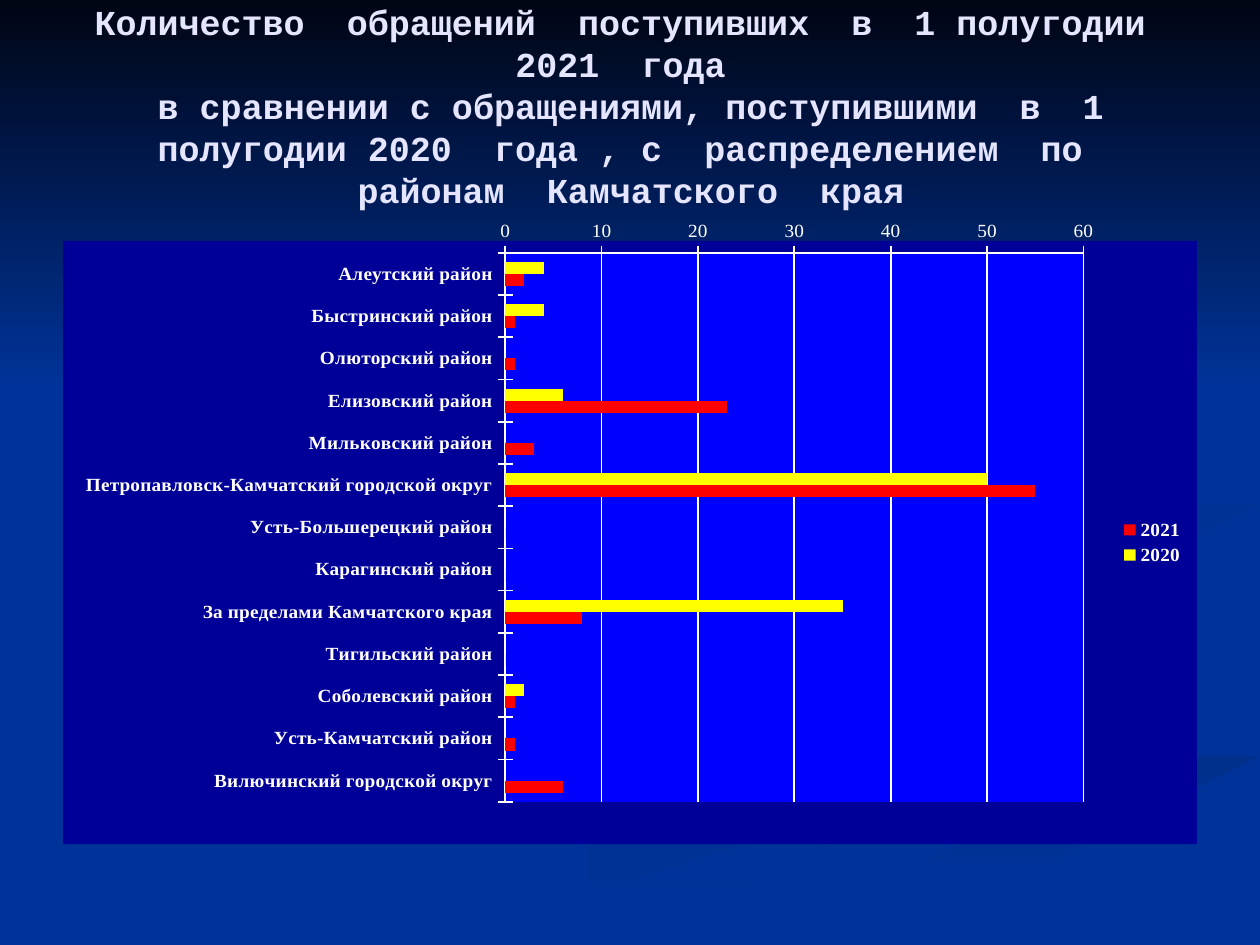
from dataclasses import dataclass

from pptx import Presentation
from pptx.chart.data import CategoryChartData
from pptx.dml.color import RGBColor
from pptx.enum.chart import (XL_AXIS_CROSSES, XL_CHART_TYPE,
                             XL_LEGEND_POSITION, XL_TICK_MARK)
from pptx.enum.shapes import MSO_SHAPE
from pptx.enum.text import MSO_ANCHOR, PP_ALIGN
from pptx.oxml import parse_xml
from pptx.oxml.ns import nsdecls
from pptx.util import Inches, Pt

BAR = XL_CHART_TYPE.BAR_CLUSTERED
CROSS = XL_TICK_MARK.CROSS
AXIS_MAX = XL_AXIS_CROSSES.MAXIMUM
LEGEND_RIGHT = XL_LEGEND_POSITION.RIGHT
RECT = MSO_SHAPE.RECTANGLE
MIDDLE = MSO_ANCHOR.MIDDLE
CENTER = PP_ALIGN.CENTER

BLUE, WHITE = "003399", "FFFFFF"
SERIF = "Times New Roman"


@dataclass
class Ribbon:
    """A background band; one colour gives a plain fill, two a gradient."""
    colors: tuple[str, ...]
    angle: int
    points: list[tuple[float, float]]


@dataclass
class Series:
    name: str
    color: str
    counts: dict[str, int]


RIBBONS = [
    Ribbon((BLUE, "003193"), 0, [
        (7.81, 5.53), (5.75, 4.59), (7.86, 5.66), (5.39, 6.49), (3, 7.49),
        (3.61, 7.49), (4.99, 6.87), (8, 5.81)]),
    Ribbon(("002F8C", BLUE), 90, [
        (5.03, 7.49), (5.71, 7.49), (6.7, 7.02), (7.85, 6.61), (9.98, 6.09),
        (9.98, 5.81), (8.31, 6.29), (6.3, 6.93)]),
    Ribbon((BLUE,), 0, [
        (7.25, 4.64), (9.43, 5.7), (6.63, 6.68), (4.77, 7.49), (5.03, 7.49),
        (6.3, 6.93), (8.31, 6.29), (9.99, 5.81), (9.99, 5.38), (7.81, 4.63),
        (9.99, 4.02), (9.99, 3.87)]),
    Ribbon(("003091", BLUE), 45, [
        (7.81, 4.6), (8.26, 4.96), (8.05, 4.72), (9.98, 4.2), (9.98, 4.02),
        (8.21, 4.34)]),
]

TITLE = ("Количество  обращений  поступивших  в  1 полугодии  2021  года \v"
         "в сравнении с обращениями, поступившими  в  1 полугодии 2020  года ,"
         " с  распределением  по  районам  Камчатского  края")

DISTRICTS = [
    "Алеутский район", "Быстринский район", "Олюторский район",
    "Елизовский район", "Мильковский район",
    "Петропавловск-Камчатский городской округ", "Усть-Большерецкий район",
    "Карагинский район", "За пределами Камчатского края",
    "Тигильский район", "Соболевский район", "Усть-Камчатский район",
    "Вилючинский городской округ"]
(ALEUT, BYSTR, OLYUT, ELIZ, MILK, PETRO, _, _,
 OUTSIDE, _, SOBOL, UST_KAM, VILYU) = DISTRICTS

# Districts that are not named have no appeals
SERIES = [
    Series("2020", "FFFF00",
           {ALEUT: 4, BYSTR: 4, ELIZ: 6, PETRO: 50, OUTSIDE: 35, SOBOL: 2}),
    Series("2021", "FF0000",
           {ALEUT: 2, BYSTR: 1, OLYUT: 1, ELIZ: 23, MILK: 3, PETRO: 55,
            OUTSIDE: 8, SOBOL: 1, UST_KAM: 1, VILYU: 6})]


def rgb(color: str) -> RGBColor:
    return RGBColor.from_string(color)


def paint(sp, colors: tuple[str, ...], angle: int) -> None:
    sp.shadow.inherit = False
    sp.line.fill.background()
    if len(colors) == 1:
        sp.fill.solid()
        sp.fill.fore_color.rgb = rgb(colors[0])
        return
    sp.fill.gradient()
    sp.fill.gradient_angle = -angle % 360
    for stop, color in zip(sp.fill.gradient_stops, colors):
        stop.color.rgb = rgb(color)


def style_font(font, size: float, color: str, bold: bool, name: str) -> None:
    font.size, font.bold, font.name = Pt(size), bold, name
    font.color.rgb = rgb(color)


def style_line(line, color: str) -> None:
    line.width = Pt(1)
    line.color.rgb = rgb(color)


def add_ribbon(s, ribbon: Ribbon) -> None:
    builder = s.shapes.build_freeform(*ribbon.points[0], scale=Inches(1))
    builder.add_line_segments(ribbon.points[1:], close=True)
    paint(builder.convert_to_shape(), ribbon.colors, ribbon.angle)


def add_title(s) -> None:
    tf = s.shapes.add_textbox(Inches(0.51), Inches(0.21),
                              Inches(9), Inches(1.25)).text_frame
    tf.word_wrap, tf.vertical_anchor = True, MIDDLE
    p = tf.paragraphs[0]
    p.text, p.alignment = TITLE, CENTER
    for r in p.runs:
        style_font(r.font, 20, "E5E5FF", True, "Courier New")


def area_fill(color: str):
    return parse_xml(f'<c:spPr {nsdecls("c", "a")}><a:solidFill>'
                     f'<a:srgbClr val="{color}"/></a:solidFill></c:spPr>')


def add_chart(s) -> None:
    data = CategoryChartData()
    data.categories = DISTRICTS
    for item in SERIES:
        data.add_series(item.name, [item.counts.get(d, 0) for d in DISTRICTS])
    chart = s.shapes.add_chart(BAR, Inches(0.5), Inches(1.75),
                               Inches(9), Inches(4.95), data).chart
    chart.has_title = False
    style_font(chart.font, 10, BLUE, False, SERIF)

    # Bars
    plot = chart.plots[0]
    plot.gap_width, plot.overlap, plot.vary_by_categories = 150, 0, False
    for series, item in zip(plot.series, SERIES):
        series.format.fill.solid()
        series.format.fill.fore_color.rgb = rgb(item.color)

    # Axes
    cat, val = chart.category_axis, chart.value_axis
    for axis, bold in ((cat, True), (val, False)):
        axis.major_tick_mark = CROSS
        style_font(axis.tick_labels.font, 11, WHITE, bold, SERIF)
        style_line(axis.format.line, WHITE)
    cat.reverse_order, cat.crosses = True, AXIS_MAX
    val.minimum_scale, val.maximum_scale, val.major_unit = 0, 60, 10
    val.has_major_gridlines = True
    style_line(val.major_gridlines.format.line, WHITE)

    # Legend
    chart.has_legend = True
    chart.legend.position, chart.legend.include_in_layout = LEGEND_RIGHT, False
    style_font(chart.legend.font, 11, WHITE, True, SERIF)

    # Plot position and area fills
    space = chart.element
    area = space.chart.plotArea
    for layout in area.findall("{*}layout"):
        area.remove(layout)
    parts = "".join(f'<c:{k} val="{v}"/>' for k, v in (
        ("layoutTarget", "inner"), ("xMode", "edge"), ("yMode", "edge"),
        ("x", 0.39), ("y", 0.02), ("w", 0.51), ("h", 0.91)))
    area.insert(0, parse_xml(f'<c:layout {nsdecls("c")}><c:manualLayout>'
                             f'{parts}</c:manualLayout></c:layout>'))
    area.append(area_fill("0000FF"))
    space.chart.addnext(area_fill("000099"))


def main() -> None:
    prs = Presentation()
    prs.slide_width, prs.slide_height = Inches(10), Inches(7.5)
    s = prs.slides.add_slide(prs.slide_layouts[6])

    # Background
    s.background.fill.solid()
    s.background.fill.fore_color.rgb = rgb(BLUE)
    for ribbon in RIBBONS:
        add_ribbon(s, ribbon)
    sky = s.shapes.add_shape(RECT, 0, 0, Inches(10), Inches(3.08))
    paint(sky, ("000514", BLUE), 90)

    # Content
    add_title(s)
    add_chart(s)
    prs.save("out.pptx")


if __name__ == "__main__":
    main()
